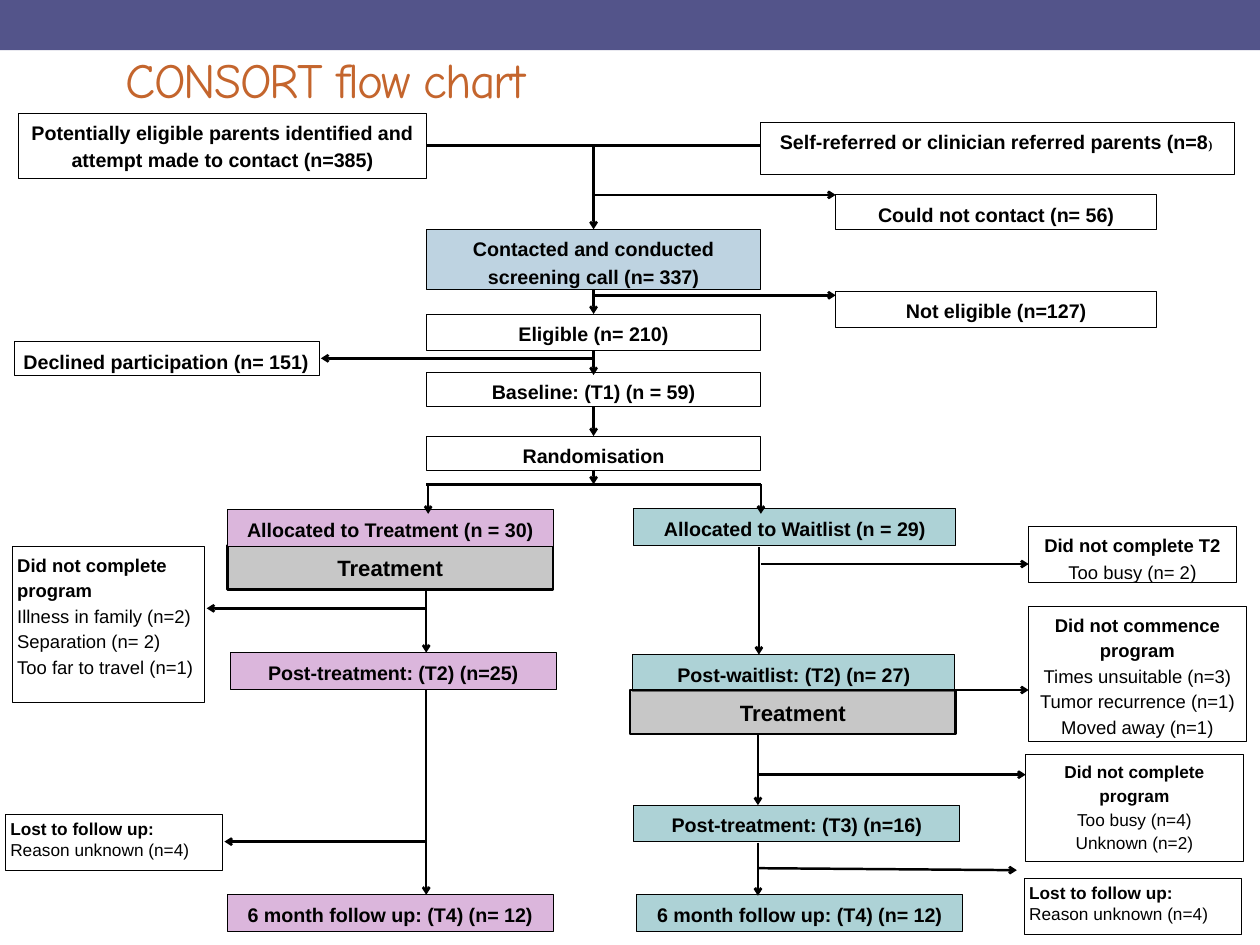
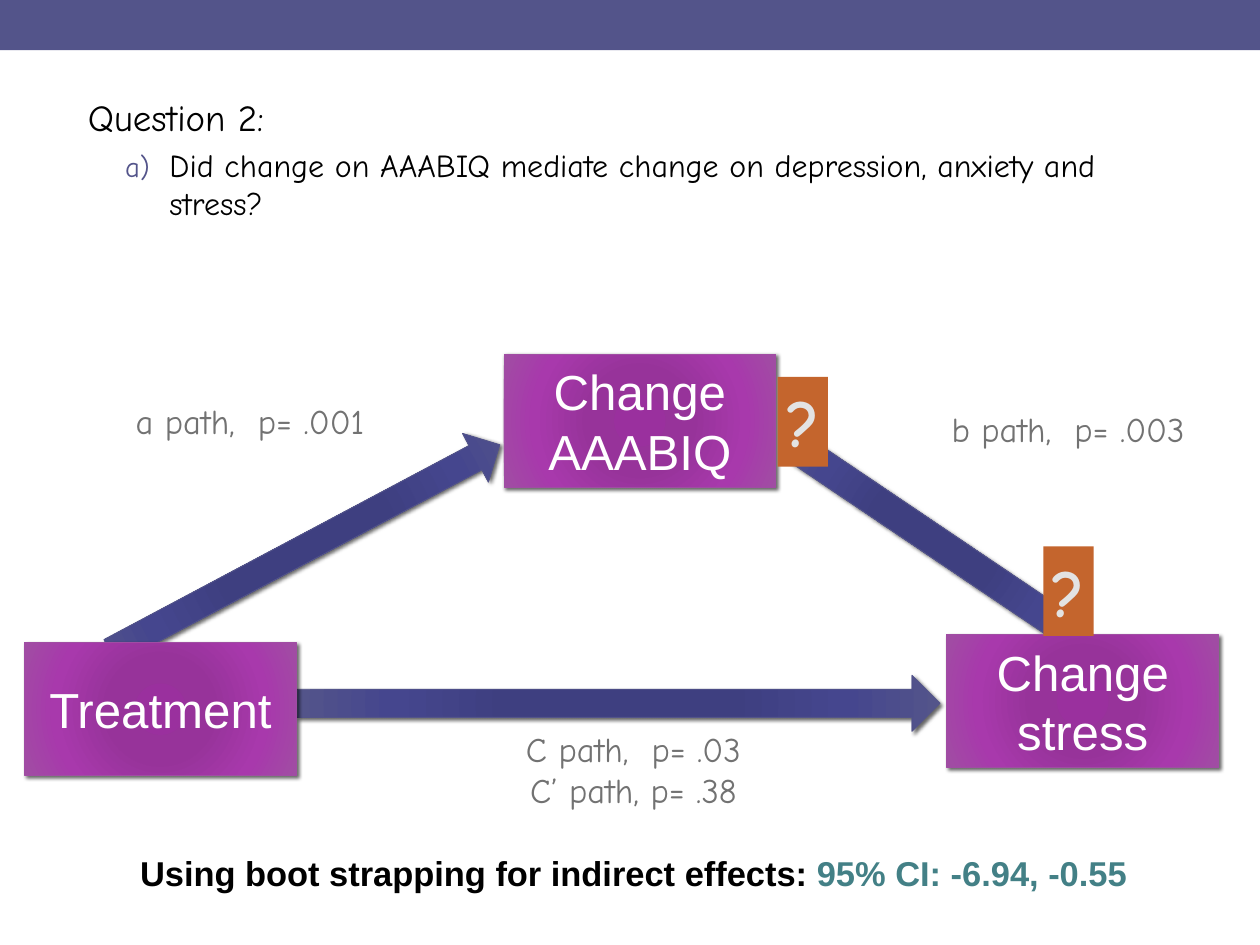
import pptx
import pptx.util
import pptx.dml.color
import pptx.enum.shapes
import pptx.enum.text
import pptx.oxml
import pptx.oxml.ns

SHAPES = pptx.enum.shapes.MSO_SHAPE
ANCHOR = pptx.enum.text.MSO_ANCHOR
ALIGN = pptx.enum.text.PP_ALIGN
COLUMNS, ROWS = 128, 96
BAND, ORANGE, GREY = "53548A", "C4652D", "727272"
BLACK, WHITE = "000000", "FFFFFF"
PINK, TEAL, BLUE = "DBB6DC", "ADD2D6", "BED3E1"
HAND, SANS, SERIF = "Comic Neue", "Arial", "Times New Roman"
INDIGO_STOPS = ((0, "3B3D82"), (34, "3E3F80"), (70, "45468E"), (100, BAND))
PURPLE_STOPS = ((0, "9A309E"), (34, "97339A"), (70, "A839AC"), (100, "A04DA3"))


def rgb(color):
    return pptx.dml.color.RGBColor.from_string(color)


def xml(markup):
    head, mark, tail = markup.partition(">")
    closing = "/" if head.endswith("/") else ""
    head = head.rstrip("/")
    return pptx.oxml.parse_xml(f"{head} {pptx.oxml.ns.nsdecls('a')}{closing}{mark}{tail}")


def write(frame, paragraphs, align=ALIGN.CENTER, line_spacing=None, **style):
    frame.word_wrap = True
    for index, pieces in enumerate(paragraphs):
        paragraph = frame.paragraphs[0] if index == 0 else frame.add_paragraph()
        paragraph.alignment = align
        if line_spacing:
            paragraph.line_spacing = line_spacing
        for piece in [pieces] if isinstance(pieces, str) else pieces:
            text, changes = (piece, {}) if isinstance(piece, str) else piece
            look = {"size": 16, "font": SANS, "color": BLACK, "bold": False, **style, **changes}
            run = paragraph.add_run()
            run.text = text
            run.font.size = pptx.util.Pt(look["size"])
            run.font.name = look["font"]
            run.font.bold = look["bold"]
            run.font.color.rgb = rgb(look["color"])
            properties = run.font._element
            if "tracking" in look:
                properties.set("spc", str(int(look["tracking"] * 100)))
            if "outline" in look:
                properties.insert(0, xml(
                    '<a:ln w="12700"><a:solidFill>'
                    f'<a:srgbClr val="{look["outline"]}"/></a:solidFill></a:ln>'))


def set_insets(frame, horizontal, vertical):
    frame.margin_left = frame.margin_right = pptx.util.Inches(horizontal)
    frame.margin_top = frame.margin_bottom = pptx.util.Inches(vertical)


class Deck:
    def __init__(self):
        self.presentation = pptx.Presentation()
        self.presentation.slide_width = pptx.util.Inches(14.22)
        self.presentation.slide_height = pptx.util.Inches(10.67)
        self.slide = None

    def across(self, columns):
        return round(self.presentation.slide_width * columns / COLUMNS)

    def down(self, rows):
        return round(self.presentation.slide_height * rows / ROWS)

    def area(self, left, top, width, height):
        return self.across(left), self.down(top), self.across(width), self.down(height)

    def new_slide(self, layout_name):
        layout = self.presentation.slide_layouts.get_by_name(layout_name)
        self.slide = self.presentation.slides.add_slide(layout)
        self.shape((0, 0, COLUMNS, 5.1), BAND)

    def place(self, placeholder, area):
        placeholder.left, placeholder.top, placeholder.width, placeholder.height = self.area(*area)
        set_insets(placeholder.text_frame, 0.14, 0.07)
        return placeholder.text_frame

    def title(self, text, area):
        frame = self.place(self.slide.shapes.title, area)
        frame.vertical_anchor = ANCHOR.MIDDLE
        write(frame, [text], align=ALIGN.LEFT, size=40, font=HAND, color=ORANGE, tracking=-1.4)

    def shape(self, area, fill, line=None, weight=0.75, kind=SHAPES.RECTANGLE):
        shape = self.slide.shapes.add_shape(kind, *self.area(*area))
        shape.shadow.inherit = False
        shape.fill.solid()
        shape.fill.fore_color.rgb = rgb(fill)
        if line:
            shape.line.color.rgb = rgb(line)
            shape.line.width = pptx.util.Pt(weight)
        else:
            shape.line.fill.background()
        return shape

    def box(self, area, paragraphs, fill=WHITE, line_spacing=1.15, inset=None, **style):
        shape = self.shape(area, fill, BLACK)
        shape.text_frame.vertical_anchor = ANCHOR.TOP
        if inset:
            set_insets(shape.text_frame, inset, inset)
        write(shape.text_frame, paragraphs, line_spacing=line_spacing, **style)

    def step(self, area, text, fill=WHITE, **style):
        self.box(area, [text], fill, bold=True, **style)

    def reasons(self, area, heading, lines, **style):
        self.box(area, [[(heading, {"bold": True})], *lines], **style)

    def treatment(self, left, top):
        shape = self.shape((left, top, 33.1, 4.5), "A6A6A6", BLACK, 2)
        color = shape._element.spPr.find(".//" + pptx.oxml.ns.qn("a:srgbClr"))
        color.append(xml('<a:alpha val="62000"/>'))
        set_insets(shape.text_frame, 0, 0)
        shape.text_frame.vertical_anchor = ANCHOR.MIDDLE
        write(shape.text_frame, ["Treatment"], size=18, bold=True)

    def connect(self, left, top, right, bottom, arrow=True):
        connector = self.slide.shapes.add_connector(
            pptx.enum.shapes.MSO_CONNECTOR.STRAIGHT,
            self.across(left), self.down(top), self.across(right), self.down(bottom))
        connector.line.color.rgb = rgb(BLACK)
        connector.line.width = pptx.util.Pt(2)
        if arrow:
            connector.line._get_or_add_ln().append(xml('<a:tailEnd type="arrow"/>'))
        connector._element.spPr.append(xml("<a:effectLst/>"))

    def glossy(self, area, stops, kind=SHAPES.RECTANGLE, rotation=0, text=None):
        shape = self.shape(area, stops[-1][1], stops[-1][1], kind=kind)
        shape.rotation = rotation
        properties = shape._element.spPr
        marks = "".join(
            f'<a:gs pos="{share * 1000}"><a:srgbClr val="{color}"/></a:gs>' for share, color in stops)
        properties.replace(properties.find(pptx.oxml.ns.qn("a:solidFill")), xml(
            f'<a:gradFill rotWithShape="1"><a:gsLst>{marks}</a:gsLst><a:path path="circle">'
            '<a:fillToRect l="100000" t="100000" r="100000" b="100000"/></a:path></a:gradFill>'))
        properties.find(pptx.oxml.ns.qn("a:effectLst")).append(xml(
            '<a:outerShdw blurRad="38100" dist="25400" dir="2700000" rotWithShape="0">'
            '<a:srgbClr val="000000"><a:alpha val="60000"/></a:srgbClr></a:outerShdw>'))
        if text:
            shape.text_frame.vertical_anchor = ANCHOR.MIDDLE
            write(shape.text_frame, [text], size=40, color=WHITE)

    def question_mark(self, left, top):
        shape = self.shape((left, top, 5.1, 9.1), ORANGE)
        shape.text_frame.vertical_anchor = ANCHOR.TOP
        write(shape.text_frame, ["?"], size=54, font=HAND, color="E3E3E3", bold=True, outline="3D405C")
        shape.text_frame.word_wrap = False

    def label(self, area, paragraphs):
        frame = self.slide.shapes.add_textbox(*self.area(*area)).text_frame
        write(frame, paragraphs, size=28, font=HAND, color=GREY)
        return frame

    def question(self, area, heading, detail):
        frame = self.place(self.slide.placeholders[1], area)
        write(frame, [heading, [(detail, {"size": 26})]], align=ALIGN.LEFT, size=30, font=HAND)
        bullets = (
            ["<a:buNone/>"],
            [f'<a:buClr><a:srgbClr val="{BAND}"/></a:buClr>', '<a:buSzPct val="90000"/>',
             f'<a:buFont typeface="{HAND}"/>', '<a:buAutoNum type="alphaLcParenR"/>'])
        layout = zip(frame.paragraphs, (0.43, 1.35), (0, -0.5), (6, 5), bullets)
        for level, (paragraph, margin, indent, gap, marks) in enumerate(layout):
            paragraph.level = level
            paragraph.space_before = pptx.util.Pt(gap)
            properties = paragraph._p.get_or_add_pPr()
            properties.set("marL", str(pptx.util.Inches(margin)))
            properties.set("indent", str(pptx.util.Inches(indent)))
            for mark in marks:
                properties.append(xml(mark))


def build_flow_chart(deck):
    deck.new_slide("Title Only")
    deck.title("CONSORT flow chart", (11.5, 0.1, 95.4, 15.8))
    deck.treatment(23.1, 55.4)

    deck.step((1.9, 11.5, 41.4, 6.6),
              "Potentially eligible parents identified and attempt made to contact (n=385)")
    deck.step((77.3, 12.4, 48.1, 5.3),
              ["Self-referred or clinician referred parents (n=8", (") ", {"size": 10, "font": SERIF})])
    deck.step((1.5, 34.7, 31, 3.4), "Declined participation (n= 151)", align=ALIGN.LEFT)
    for top, height, text in ((19.8, 3.5, "Could not contact (n= 56)"),
                              (29.6, 3.7, "Not eligible (n=127)")):
        deck.step((84.9, top, 32.6, height), text)
    for top, height, text, fill in (
            (23.3, 6.1, "Contacted and conducted screening call (n= 337)", BLUE),
            (31.9, 3.7, "Eligible (n= 210)", WHITE),
            (37.8, 3.5, "Baseline: (T1) (n = 59)", WHITE),
            (44.3, 3.5, "Randomisation", WHITE)):
        deck.step((43.3, top, 34, height), text, fill)
    for left, top, width, text, fill in (
            (23.1, 51.8, 33.1, "Allocated to Treatment (n = 30)", PINK),
            (23.4, 66.3, 33.1, "Post-treatment: (T2) (n=25)", PINK),
            (23.1, 90.9, 33.1, "6 month follow up: (T4) (n= 12)", PINK),
            (64.4, 51.7, 32.7, "Allocated to Waitlist (n = 29)", TEAL),
            (64.3, 66.5, 32.7, "Post-waitlist: (T2) (n= 27)", TEAL),
            (64.4, 81.8, 33.1, "Post-treatment: (T3) (n=16)", TEAL),
            (64.7, 90.9, 33.1, "6 month follow up: (T4) (n= 12)", TEAL)):
        deck.step((left, top, width, 3.7), text, fill)
    deck.treatment(64, 70.1)

    deck.reasons((1.3, 55.5, 19.5, 15.9), "Did not complete program",
                 ["Illness in family (n=2)", "Separation (n= 2)", "Too far to travel (n=1)"],
                 size=15, align=ALIGN.LEFT, inset=0.05)
    deck.reasons((104.5, 53.5, 21.1, 5.7), "Did not complete T2",
                 [["Too busy (n= 2", (")", {"size": 16})]], size=15)
    deck.reasons((104.5, 61.6, 22.1, 13.7), "Did not commence program",
                 ["Times unsuitable (n=3)", "Tumor recurrence (n=1)", "Moved away (n=1)"], size=15)
    deck.reasons((104.2, 76.6, 22.1, 10.9), "Did not complete program",
                 ["Too busy (n=4)", "Unknown (n=2)"], size=14, inset=0.05)
    for left, top in ((104.1, 89.2), (0.6, 82.7)):
        deck.reasons((left, top, 22, 5.7), "Lost to follow up:", ["Reason unknown (n=4)"],
                     size=14, align=ALIGN.LEFT, inset=0.05, line_spacing=None)

    for row in (14.8, 49.2):
        deck.connect(43.3, row, 77.3, row, arrow=False)
    for column, top, bottom in (
            (60.3, 14.8, 23.3), (60.3, 29.4, 31.9), (60.3, 35.6, 38.1),
            (60.3, 41.3, 44.3), (60.3, 47.7, 49.2),
            (43.5, 49.2, 52.2), (43.3, 60, 66.3), (43.3, 70.1, 90.9),
            (77.3, 49.2, 52.2), (77.1, 55.6, 66.5), (77, 74.7, 81.8), (77, 85.6, 91)):
        deck.connect(column, top, column, bottom)
    for row, start, end in (
            (19.8, 60.3, 84.9), (30, 60.3, 84.9), (36.4, 60.3, 32.6),
            (57.3, 77.3, 104.5), (70.1, 97, 104.5), (78.7, 77, 104.2),
            (61.8, 43.3, 21), (85.5, 43.2, 22.8)):
        deck.connect(start, row, end, row)
    deck.connect(77, 88.2, 103.3, 88.4)


def build_mediation(deck):
    deck.new_slide("Title and Content")
    empty_title = deck.slide.shapes.title._element
    empty_title.getparent().remove(empty_title)
    deck.glossy((93.15, 37.8, 3.15, 34), INDIGO_STOPS, rotation=124)
    deck.question((3.8, 9, 115.2, 78.7), "Question 2:",
                  "Did change on AAABIQ mediate change on depression, anxiety and stress?")
    deck.glossy((8.6, 52.9, 44.8, 5.6), INDIGO_STOPS, SHAPES.RIGHT_ARROW, 332)
    deck.glossy((30.2, 68.6, 65.3, 5.7), INDIGO_STOPS, SHAPES.RIGHT_ARROW)
    for left, top, text in ((51.2, 36, "Change AAABIQ"), (96.2, 64.5, "Change stress"),
                            (2.5, 65.3, "Treatment")):
        deck.glossy((left, top, 27.6, 13.5), PURPLE_STOPS, text=text)
    deck.question_mark(79, 38.3)
    deck.question_mark(106, 55.5)
    deck.label((5.9, 40.2, 39, 5.1), ["a path,  p= .001"])
    deck.label((89, 41, 39, 5.1), ["b path,  p= .003"])
    summary = {"font": SANS, "bold": True}
    results = deck.label((8, 73.5, 112.7, 17.9), [
        "C path,  p= .03",
        "C’ path, p= .38",
        [("Using boot strapping for indirect effects: ", {**summary, "color": BLACK}),
         ("95% CI: -6.94, -0.55", {**summary, "color": "438086"})]])
    results.paragraphs[-1].space_before = pptx.util.Pt(34)


def main():
    deck = Deck()
    build_flow_chart(deck)
    build_mediation(deck)
    deck.presentation.save("out.pptx")


if __name__ == "__main__":
    main()
